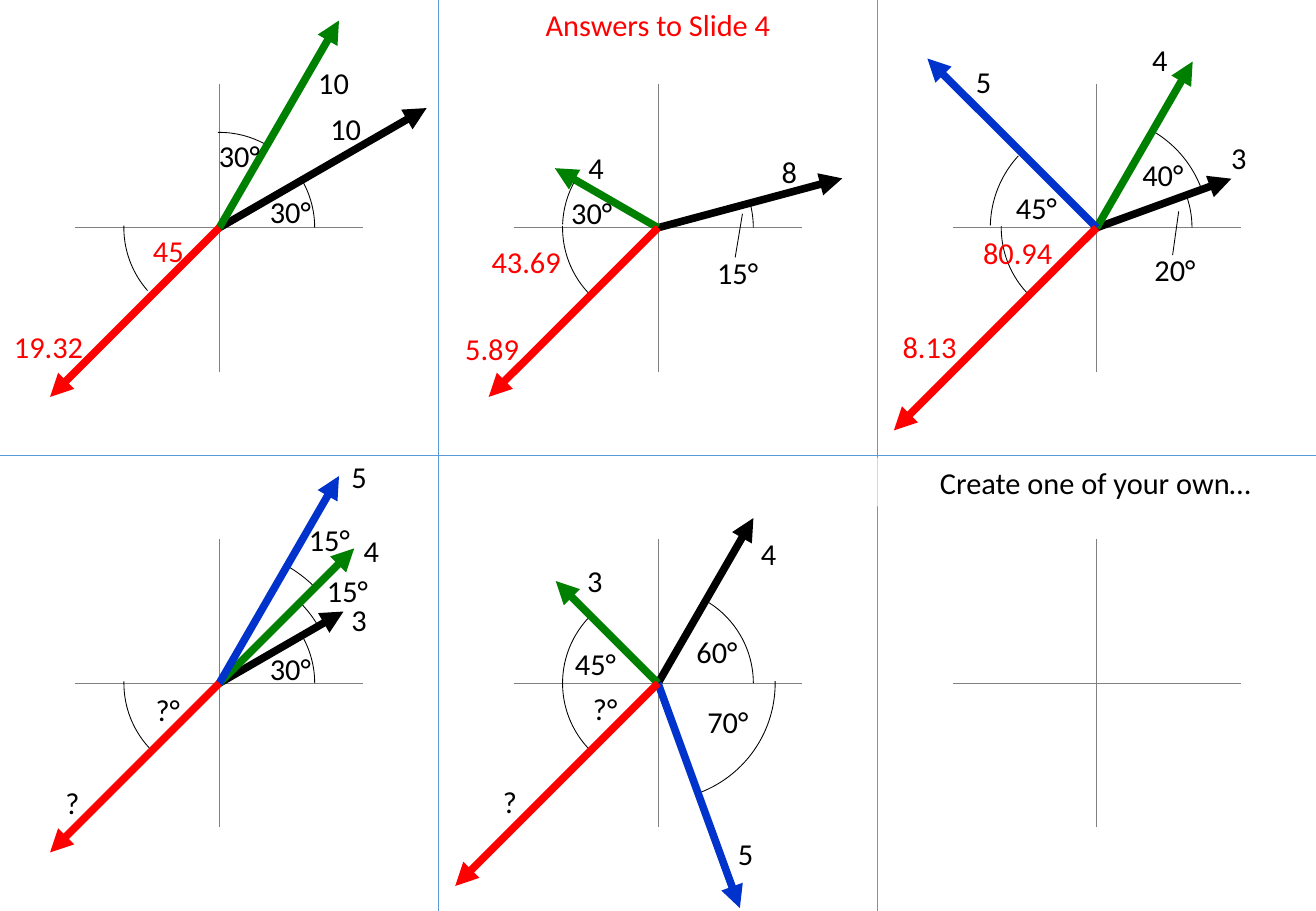
from math import cos, radians, sin

from lxml.etree import SubElement
from pptx import Presentation
from pptx.dml.color import RGBColor
from pptx.enum.shapes import MSO_CONNECTOR, MSO_SHAPE
from pptx.enum.text import MSO_ANCHOR, MSO_AUTO_SIZE, PP_ALIGN
from pptx.oxml.ns import qn
from pptx.util import Inches, Pt

COLORS = {
    "black": "000000",
    "red": "FF0000",
    "green": "008000",
    "blue": "0033CC",
    "axis": "808080",
    "divider": "5B9BD5",
    "white": "FFFFFF",
}
SLIDE_W, SLIDE_H = 10.83, 7.5
PANEL_W, PANEL_H = SLIDE_W / 3, SLIDE_H / 2
AXIS_REACH = 1.185
RADIUS = 0.785

prs = Presentation()
prs.slide_width = Inches(SLIDE_W)
prs.slide_height = Inches(SLIDE_H)
slide = prs.slides.add_slide(prs.slide_layouts[5])
shapes = slide.shapes


def add_line(x1, y1, x2, y2, color, width=0.5, arrow=False):
    line = shapes.add_connector(
        MSO_CONNECTOR.STRAIGHT, Inches(x1), Inches(y1), Inches(x2), Inches(y2))
    line.line.color.rgb = RGBColor.from_string(COLORS[color])
    line.line.width = Pt(width)
    if arrow:
        SubElement(line.line._get_or_add_ln(), qn("a:tailEnd"), type="triangle")
    SubElement(line._element.spPr, qn("a:effectLst"))


def write(box, text, color):
    frame = box.text_frame
    frame.word_wrap = True
    frame.auto_size = MSO_AUTO_SIZE.SHAPE_TO_FIT_TEXT
    frame.vertical_anchor = MSO_ANCHOR.TOP
    paragraph = frame.paragraphs[0]
    paragraph.alignment = PP_ALIGN.CENTER
    run = paragraph.add_run()
    run.text = text
    run.font.name = "Calibri"
    run.font.size = Pt(18)
    run.font.color.rgb = RGBColor.from_string(COLORS[color])


heading = shapes.title
heading.left, heading.top = Inches(0), Inches(0)
heading.width, heading.height = Inches(SLIDE_W), Inches(0.4)
write(heading, "Answers to Slide 4", "red")

add_line(0, PANEL_H, SLIDE_W, PANEL_H, "divider")
for col in (1, 2):
    add_line(col * PANEL_W, 0, col * PANEL_W, SLIDE_H, "divider")

# vectors: colour, length, angle; arcs: radius, start, end; labels: text, left, top, width, colour
panels = [
    {
        "vectors": [("black", 1.97, 30), ("green", 1.97, 60), ("red", 1.97, 225)],
        "arcs": [(RADIUS, 327.8, 0), (RADIUS, 269.2, 298.7), (RADIUS, 138.8, 181.2)],
        "labels": [("10", 2.57, 0.86, 0.55, "black"), ("30°", 2.03, 1.54, 0.72, "black"),
                   ("10", 2.47, 0.48, 0.55, "black"), ("30°", 1.61, 1.08, 0.72, "black"),
                   ("45", 1.11, 1.86, 0.55, "red"), ("19.32", -0.02, 2.65, 0.84, "red")],
        "pointers": [],
    },
    {
        "vectors": [("black", 1.57, 15), ("green", 0.98, 150), ("red", 1.97, 225)],
        "arcs": [(RADIUS, 345.1, 0), (RADIUS, 182, 211.5), (RADIUS, 136.8, 181.1)],
        "labels": [("4", 1.02, 1.18, 0.55, "black"), ("8", 2.61, 1.21, 0.55, "black"),
                   ("30°", 0.9, 1.55, 0.72, "black"), ("15°", 2.1, 2.04, 0.72, "black"),
                   ("43.69", 0.18, 1.95, 1.08, "red"), ("5.89", 0.04, 2.67, 0.8, "red")],
        "pointers": [(2.44, 2.12, 2.5, 1.76)],
    },
    {
        "vectors": [("black", 1.18, 20), ("green", 1.58, 60),
                    ("blue", 1.97, 135), ("red", 2.36, 225)],
        "arcs": [(RADIUS, 338.4, 0), (0.92, 299.7, 339.2),
                 (0.875, 181.3, 222.5), (RADIUS, 136.8, 181.1)],
        "labels": [("3", 2.7, 1.1, 0.55, "black"), ("40°", 1.99, 1.24, 0.72, "black"),
                   ("4", 2.05, 0.29, 0.55, "black"), ("5", 0.6, 0.47, 0.55, "black"),
                   ("20°", 2.09, 2.02, 0.72, "black"), ("45°", 0.95, 1.51, 0.72, "black"),
                   ("80.94", 0.6, 1.88, 1.11, "red"), ("8.13", 0.01, 2.65, 0.84, "red")],
        "pointers": [(2.43, 2.1, 2.48, 1.74)],
    },
    {
        "vectors": [("black", 1.18, 30), ("green", 1.57, 45),
                    ("blue", 1.97, 60), ("red", 1.97, 225)],
        "arcs": [(RADIUS, 327.8, 0), (0.94, 315.2, 330.2),
                 (1.115, 299.7, 314.5), (RADIUS, 136.8, 181.1)],
        "labels": [("3", 2.68, 1.15, 0.55, "black"), ("4", 2.78, 0.58, 0.55, "black"),
                   ("5", 2.68, -0.03, 0.55, "black"), ("30°", 2.03, 1.55, 0.72, "black"),
                   ("15°", 2.5, 0.91, 0.72, "black"), ("15°", 2.35, 0.49, 0.72, "black"),
                   ("?", 0.32, 2.66, 0.55, "black"), ("?°", 1.02, 1.89, 0.72, "black")],
        "pointers": [],
    },
    {
        "vectors": [("black", 1.57, 60), ("blue", 1.97, -70),
                    ("green", 1.19, 135), ("red", 2.36, 225)],
        "arcs": [(RADIUS, 302.5, 0), (RADIUS, 179.9, 224.2),
                 (0.965, 359, 68.7), (RADIUS, 136.8, 181.1)],
        "labels": [("5", 2.25, 3.08, 0.55, "black"), ("3", 1.01, 0.83, 0.55, "black"),
                   ("4", 2.44, 0.61, 0.55, "black"), ("60°", 1.93, 1.41, 0.72, "black"),
                   ("45°", 0.93, 1.51, 0.72, "black"), ("70°", 2.02, 1.99, 0.72, "black"),
                   ("?", 0.31, 2.65, 0.55, "black"), ("?°", 1.01, 1.88, 0.72, "black")],
        "pointers": [],
    },
    {"vectors": [], "arcs": [], "labels": [], "pointers": []},
]

for index, panel in enumerate(panels):
    row, col = divmod(index, 3)
    left, top = col * PANEL_W, row * PANEL_H
    x, y = left + PANEL_W / 2, top + PANEL_H / 2
    add_line(x - AXIS_REACH, y, x + AXIS_REACH, y, "axis")
    add_line(x, y - AXIS_REACH, x, y + AXIS_REACH, "axis")

    for radius, start, end in panel["arcs"]:
        arc = shapes.add_shape(
            MSO_SHAPE.ARC, Inches(x - radius), Inches(y - radius),
            Inches(2 * radius), Inches(2 * radius))
        arc.adjustments[0] = start * 0.6
        arc.adjustments[1] = end * 0.6
        arc.shadow.inherit = False
        arc.fill.background()
        arc.line.color.rgb = RGBColor.from_string(COLORS["black"])
        arc.line.width = Pt(0.5)

    for color, length, angle in panel["vectors"]:
        tip_x = x + length * cos(radians(angle))
        tip_y = y - length * sin(radians(angle))
        add_line(x, y, tip_x, tip_y, color, 4.5, arrow=True)

    for x1, y1, x2, y2 in panel["pointers"]:
        add_line(left + x1, top + y1, left + x2, top + y2, "black")

    for text, label_x, label_y, width, color in panel["labels"]:
        label = shapes.add_textbox(
            Inches(left + label_x), Inches(top + label_y), Inches(width), Inches(0.4))
        write(label, text, color)

invitation = shapes.add_shape(
    MSO_SHAPE.RECTANGLE, Inches(7.22), Inches(3.77), Inches(3.59), Inches(0.4))
invitation.shadow.inherit = False
invitation.fill.solid()
invitation.fill.fore_color.rgb = RGBColor.from_string(COLORS["white"])
invitation.line.fill.background()
write(invitation, "Create one of your own…", "black")

prs.save("out.pptx")
